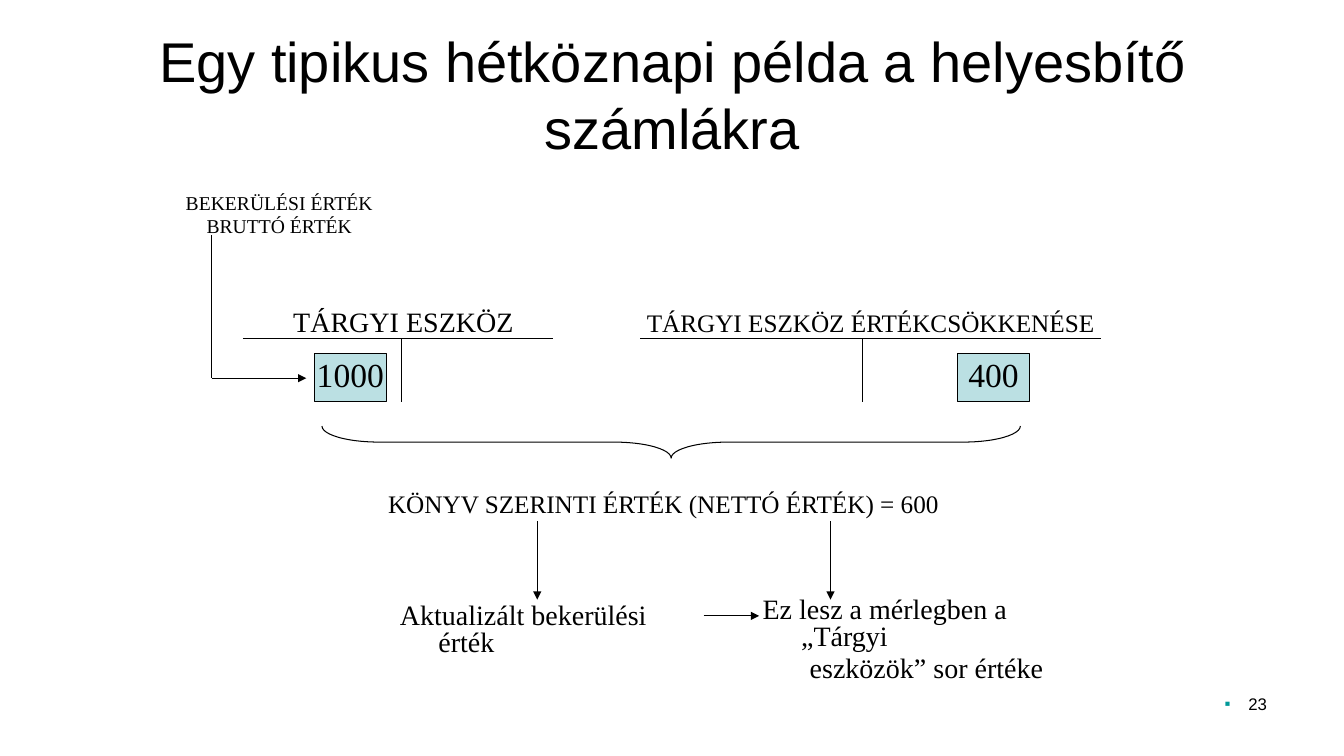
from lxml import etree
from pptx import Presentation
from pptx.dml.color import RGBColor
from pptx.enum.shapes import MSO_CONNECTOR, MSO_SHAPE
from pptx.enum.text import MSO_ANCHOR, MSO_AUTO_SIZE as FIT, PP_ALIGN as ALIGN
from pptx.oxml.ns import qn
from pptx.util import Cm, Pt

BLACK = RGBColor(0x00, 0x00, 0x00)
PALE_TEAL = RGBColor(0xBB, 0xE0, 0xE3)
BULLET_TEAL = RGBColor(0x00, 0x99, 0x99)


class AccountSlide:
    heading_font = "Arial"
    body_font = "Times New Roman"
    line_width = Pt(0.75)
    hanging = Cm(0.97)

    def __init__(self, deck):
        self.slide = deck.slides.add_slide(deck.slide_layouts[5])
        self.shapes = self.slide.shapes

    def style(self, frame, size, font, align):
        for paragraph in frame.paragraphs:
            paragraph.alignment = align
            for run in paragraph.runs:
                run.font.size = Pt(size)
                run.font.name = font
                run.font.color.rgb = BLACK

    def style_body(self, frame, size, align):
        self.style(frame, size, self.body_font, align)
        for paragraph in frame.paragraphs:
            paragraph.line_spacing = 0.8
            paragraph.space_before = Pt(size * 0.2)
            properties = paragraph._p.get_or_add_pPr()
            properties.set("marL", str(self.hanging))
            properties.set("indent", str(-self.hanging))

    def title(self, text, left, top, width, height):
        heading = self.shapes.title
        heading.left, heading.top = Cm(left), Cm(top)
        heading.width, heading.height = Cm(width), Cm(height)
        frame = heading.text_frame
        frame.text = text
        frame.auto_size = FIT.NONE
        frame.vertical_anchor = MSO_ANCHOR.MIDDLE
        self.style(frame, 40, self.heading_font, ALIGN.CENTER)

    def label(self, text, left, top, width, height, size, align=ALIGN.LEFT, wrap=False):
        box = self.shapes.add_textbox(Cm(left), Cm(top), Cm(width), Cm(height))
        frame = box.text_frame
        frame.text = text
        frame.word_wrap = wrap
        frame.auto_size = FIT.SHAPE_TO_FIT_TEXT
        self.style_body(frame, size, align)
        return frame

    def page_number(self, text, left, top, width, height):
        box = self.shapes.add_textbox(Cm(left), Cm(top), Cm(width), Cm(height))
        frame = box.text_frame
        frame.text = text
        frame.word_wrap = True
        self.style(frame, 12, self.heading_font, ALIGN.RIGHT)
        properties = frame.paragraphs[0]._p.get_or_add_pPr()
        properties.set("marL", str(Cm(0.6)))
        properties.set("indent", str(-Cm(0.6)))
        colour = etree.SubElement(properties, qn("a:buClr"))
        etree.SubElement(colour, qn("a:srgbClr"), val=str(BULLET_TEAL))
        etree.SubElement(properties, qn("a:buFont"), typeface=self.heading_font)
        etree.SubElement(properties, qn("a:buChar"), char="▪")

    def outline(self, shape):
        shape.shadow.inherit = False
        shape.line.color.rgb = BLACK
        shape.line.width = self.line_width

    def amount(self, text, left, top, width=1.82, height=1.2):
        box = self.shapes.add_shape(
            MSO_SHAPE.RECTANGLE, Cm(left), Cm(top), Cm(width), Cm(height))
        self.outline(box)
        box.fill.solid()
        box.fill.fore_color.rgb = PALE_TEAL
        frame = box.text_frame
        frame.text = text
        frame.word_wrap = False
        frame.vertical_anchor = MSO_ANCHOR.MIDDLE
        self.style_body(frame, 24, ALIGN.CENTER)

    def brace(self, left, top, width, height):
        brace = self.shapes.add_shape(
            MSO_SHAPE.LEFT_BRACE, Cm(left), Cm(top), Cm(width), Cm(height))
        self.outline(brace)
        brace.fill.background()
        brace.rotation = 270
        brace.adjustments[0] = 1.78
        brace.adjustments[1] = 0.5

    def line(self, x1, y1, x2, y2, arrow=False):
        line = self.shapes.add_connector(
            MSO_CONNECTOR.STRAIGHT, Cm(x1), Cm(y1), Cm(x2), Cm(y2))
        line.line.color.rgb = BLACK
        line.line.width = self.line_width
        if arrow:
            etree.SubElement(line.line._get_or_add_ln(), qn("a:tailEnd"), type="triangle")
        etree.SubElement(line._element.spPr, qn("a:effectLst"))

    def t_account(self, left, right, stem, top=8.53, bottom=10.13):
        self.line(left, top, right, top)
        self.line(stem, top, stem, bottom)


def main():
    deck = Presentation()
    deck.slide_width, deck.slide_height = Cm(33.87), Cm(19.05)
    page = AccountSlide(deck)

    page.title("Egy tipikus hétköznapi példa a helyesbítő számlákra", 1.7, 0.76, 30.48, 3.18)
    page.page_number("23", 24.28, 17.35, 7.9, 1.32)

    page.t_account(6.12, 13.94, 10.13)
    page.t_account(16.13, 27.74, 21.74)
    page.label("TÁRGYI ESZKÖZ", 7.14, 7.72, 6.1, 0.94, 20)
    page.label("TÁRGYI ESZKÖZ ÉRTÉKCSÖKKENÉSE", 16.05, 7.76, 11.9, 0.9, 18)
    page.amount("1000", 7.92, 8.92)
    page.amount("400", 24.13, 8.92)

    page.label("BEKERÜLÉSI ÉRTÉK\nBRUTTÓ ÉRTÉK", 4.32, 4.8, 5.44, 1.35, 14, ALIGN.CENTER)
    page.line(5.33, 5.92, 5.33, 9.53)
    page.line(5.33, 9.53, 7.72, 9.53, arrow=True)

    page.brace(16.51, 2.34, 0.81, 17.6)
    page.label("KÖNYV SZERINTI ÉRTÉK (NETTÓ ÉRTÉK) = 600", 9.53, 12.32, 14.73, 0.86, 18)
    for x in (13.54, 20.93):
        page.line(x, 13.13, x, 15.11, arrow=True)

    page.label("Aktualizált bekerülési érték", 9.83, 15.09, 8, 0.94, 20, wrap=True)
    page.line(17.73, 15.52, 19.13, 15.52, arrow=True)
    balance = page.label("Ez lesz a mérlegben a „Tárgyi\neszközök” sor értéke",
                         18.97, 14.94, 8.76, 1.8, 20, wrap=True)
    balance.paragraphs[1].alignment = ALIGN.CENTER

    deck.save("out.pptx")


if __name__ == "__main__":
    main()
